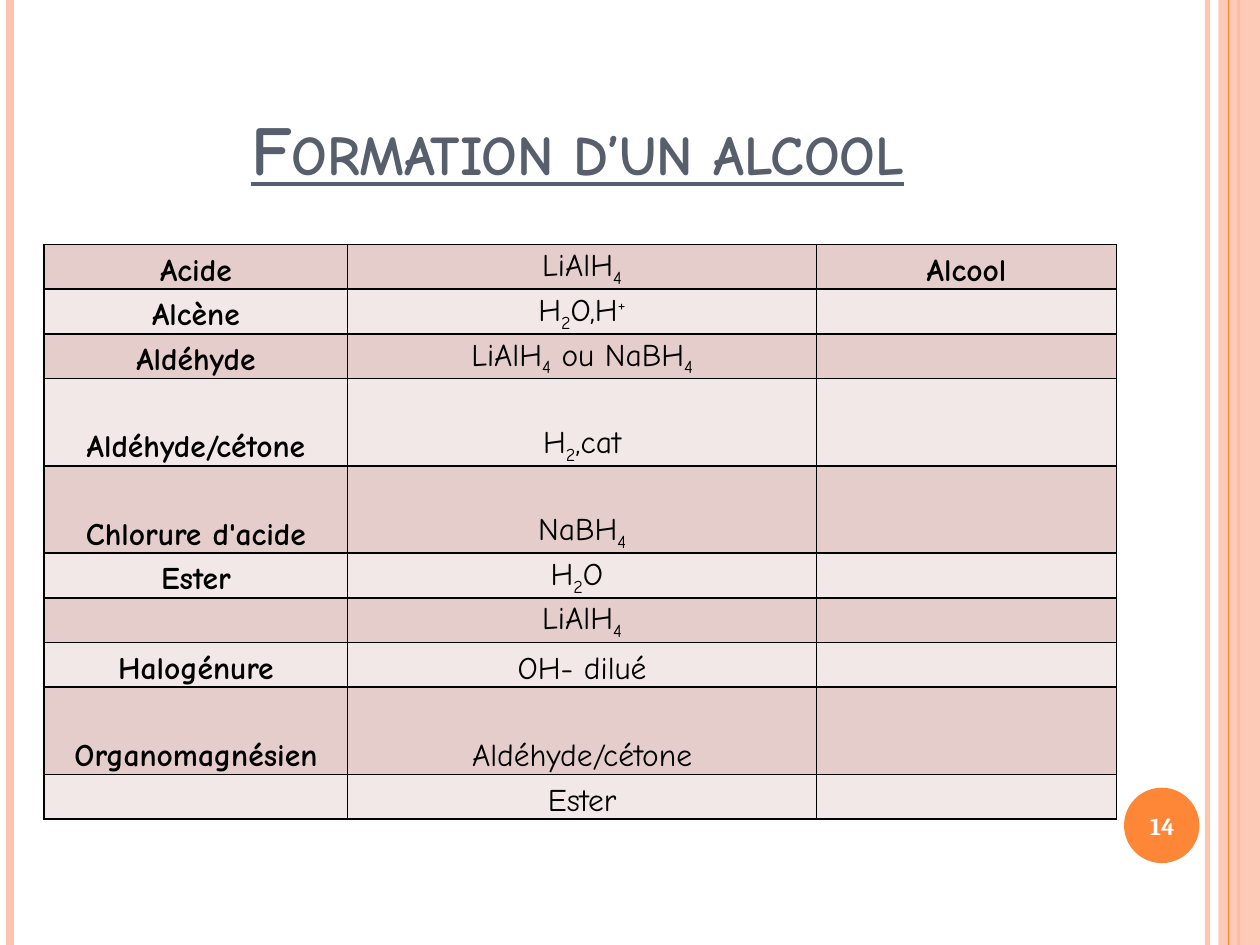
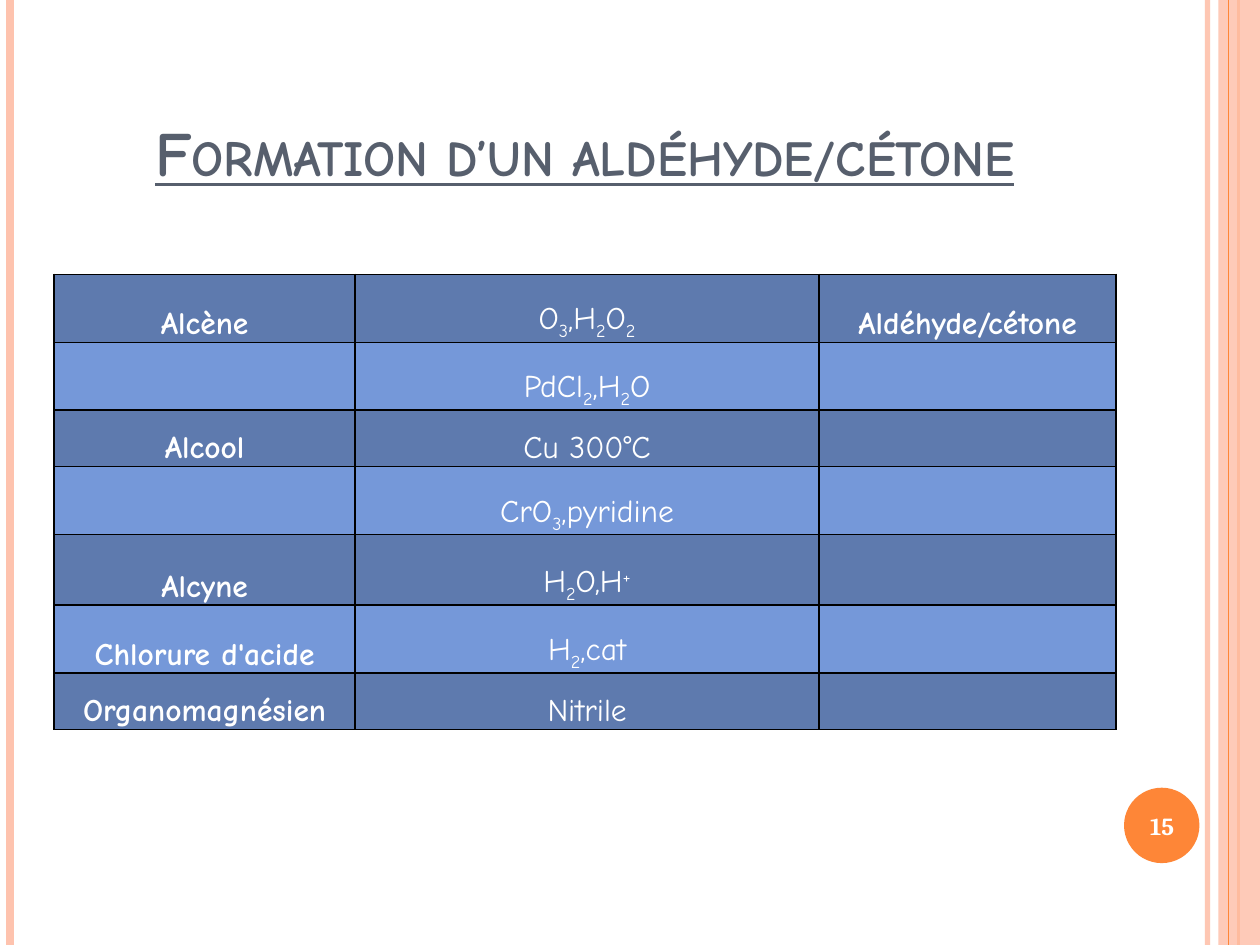
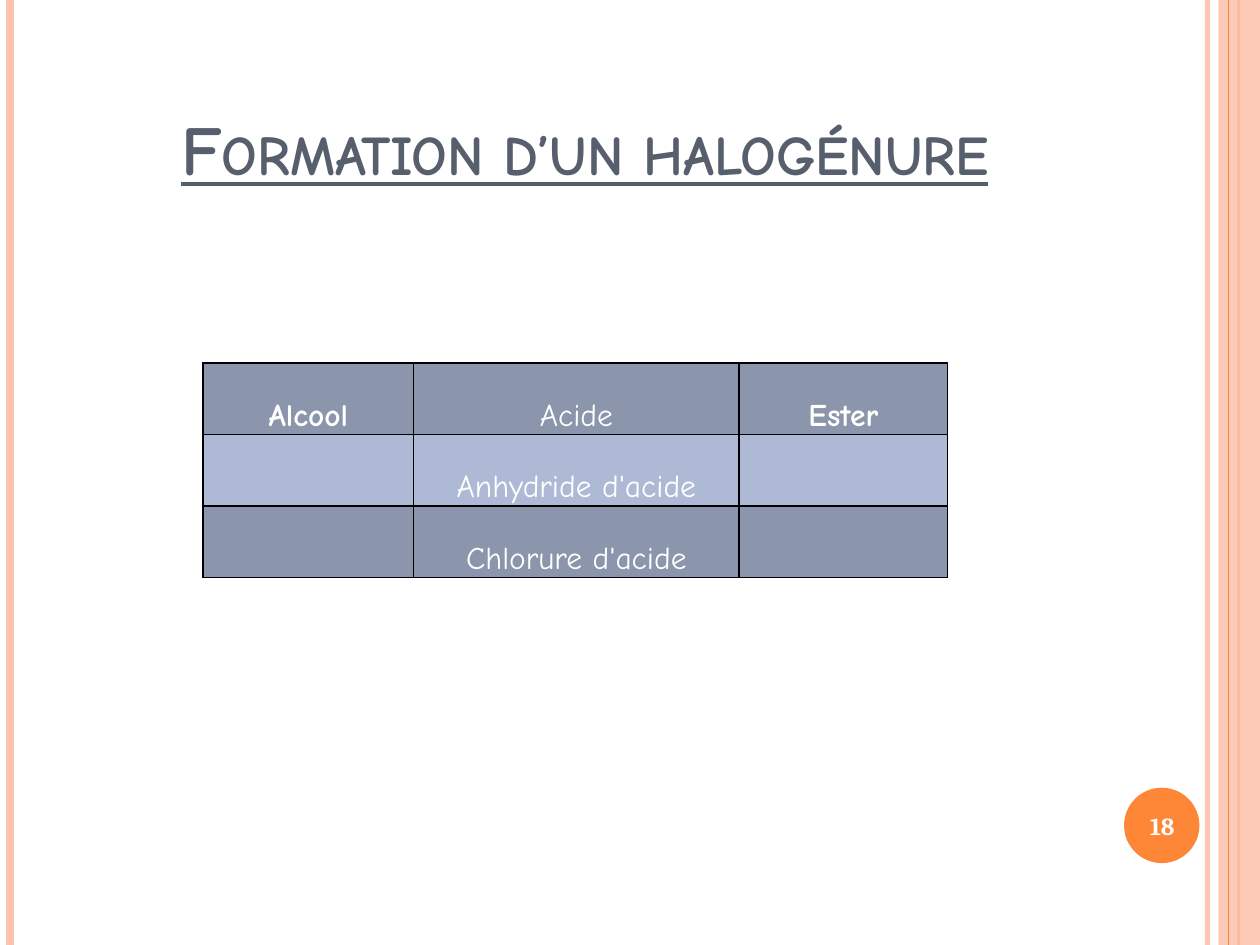
import pptx
import pptx.dml.color
import pptx.enum.shapes
import pptx.enum.text
import pptx.oxml
import pptx.oxml.ns
import pptx.util

Cm = pptx.util.Cm
Pt = pptx.util.Pt
ANCHOR = pptx.enum.text.MSO_ANCHOR
SHAPE = pptx.enum.shapes.MSO_SHAPE

PAGE_WIDTH, PAGE_HEIGHT = 25.4, 19.05

COLOURS = {
    "peach": "FEC3AE", "orange": "FE8637", "slate": "575F6D",
    "black": "000000", "white": "FFFFFF",
    "rose": "E5CDCC", "pale rose": "F2E8E8",
    "steel blue": "5E7AAE", "sky blue": "7598D9",
    "grey blue": "8B95AB", "pale blue": "AEBAD5",
}

TITLE_FORMAT = {"name": "Comic Neue", "bold": True, "underline": True}
NUMBER_FORMAT = {"name": "Cambria", "size": Pt(14), "bold": True}
CELL_FORMAT = {"name": "Comic Neue", "size": Pt(18)}
CELL_LAYOUT = {
    "margin_left": Cm(0.03), "margin_right": Cm(0.03), "margin_top": Cm(0.03),
    "margin_bottom": 0, "vertical_anchor": ANCHOR.BOTTOM,
}

# Vertical rules: x in cm, colour, width in points, opacity in percent
RULES_BEHIND_BAND = [
    (24.34, "peach", 3, 93), (0.2, "peach", 4.5, 100), (24.97, "orange", 1.5, 100),
]
RULE_ON_BAND = (24.77, "orange", 0.75, 100)

# In formulas, _ lowers and ^ raises the next character
BASELINES = {"_": -25000, "^": 30000}

# Each row: substrate, reagent, height in cm
ALCOHOL_ROWS = [
    ("Acide", "LiAlH_4", 0.9),
    ("Alcène", "H_2O,H^+", 0.9),
    ("Aldéhyde", "LiAlH_4 ou NaBH_4", 0.9),
    ("Aldéhyde/cétone", "H_2,cat", 1.76),
    ("Chlorure d'acide", "NaBH_4", 1.76),
    ("Ester", "H_2O ", 0.9),
    ("", "LiAlH_4", 0.9),
    ("Halogénure", "OH- dilué", 0.9),
    ("Organomagnésien", "Aldéhyde/cétone", 1.76),
    ("", "Ester", 0.9),
]
CARBONYL_ROWS = [
    ("Alcène", "O_3,H_2O_2", 1.37),
    ("", "PdCl_2,H_2O", 1.37),
    ("Alcool", "Cu 300°C", 1.14),
    ("", "CrO_3,pyridine", 1.37),
    ("Alcyne", "H_2O,H^+", 1.42),
    ("Chlorure d'acide", "H_2,cat", 1.37),
    ("Organomagnésien", "Nitrile", 1.14),
]
ESTER_ROWS = [
    ("Alcool", "Acide", 1.44),
    ("", "Anhydride d'acide", 1.44),
    ("", "Chlorure d'acide", 1.44),
]


def colour(name):
    return pptx.dml.color.RGBColor.from_string(COLOURS[name])


def apply(target, values):
    for name, value in values.items():
        setattr(target, name, value)


def set_opacity(element, percent):
    for node in element.iter(pptx.oxml.ns.qn("a:srgbClr")):
        pptx.oxml.ns.qn("a:alpha")
        node.append(pptx.oxml.parse_xml(
            f'<a:alpha {pptx.oxml.ns.nsdecls("a")} val="{percent * 1000}"/>'))


def add_span(para, text, ink, values):
    span = para.add_run()
    span.text = text
    apply(span.font, values)
    span.font.color.rgb = colour(ink)
    return span


def add_formula(para, formula, ink, values):
    marked = formula.replace("_", "|_").replace("^", "|^")
    for piece in marked.split("|"):
        if piece[:1] in BASELINES:
            span = add_span(para, piece[1], ink, values)
            span.font._element.set("baseline", str(BASELINES[piece[0]]))
            piece = piece[2:]
        if piece:
            add_span(para, piece, ink, values)


def add_text(page, area, text, ink, values, anchor):
    box = page.shapes.add_textbox(*map(Cm, area))
    apply(box.text_frame, {"word_wrap": True, "vertical_anchor": anchor})
    para = box.text_frame.paragraphs[0]
    para.alignment = pptx.enum.text.PP_ALIGN.CENTER
    return add_span(para, text, ink, values)


def add_rule(page, x, ink, width, opacity):
    rule = page.shapes.add_connector(
        pptx.enum.shapes.MSO_CONNECTOR.STRAIGHT, Cm(x), 0, Cm(x), Cm(PAGE_HEIGHT))
    rule.line.width = Pt(width)
    rule.line.color.rgb = colour(ink)
    if opacity < 100:
        set_opacity(rule.line._ln, opacity)
    rule._element.spPr.append(pptx.oxml.parse_xml(
        f'<a:effectLst {pptx.oxml.ns.nsdecls("a")}/>'))


def add_filled_shape(page, kind, area, ink, opacity=100):
    shape = page.shapes.add_shape(kind, *map(Cm, area))
    shape.shadow.inherit = False
    shape.fill.solid()
    shape.fill.fore_color.rgb = colour(ink)
    shape.line.fill.background()
    if opacity < 100:
        set_opacity(shape._element.spPr, opacity)


def add_page(deck, title, title_area, title_size, number):
    page = deck.slides.add_slide(deck.slide_layouts[6])
    # Side bands and number disc
    for rule in RULES_BEHIND_BAND:
        add_rule(page, *rule)
    add_filled_shape(page, SHAPE.RECTANGLE, (24.56, 0, 0.84, PAGE_HEIGHT), "peach", 87)
    add_rule(page, *RULE_ON_BAND)
    add_filled_shape(page, SHAPE.OVAL, (22.66, 15.88, 1.52, 1.52), "orange")
    # Title and page number
    span = add_text(page, title_area, title, "slate",
                    {**TITLE_FORMAT, "size": Pt(title_size)}, ANCHOR.BOTTOM)
    span.font._element.set("cap", "small")
    add_text(page, (22.58, 15.93, 1.7, 1.45), str(number), "white",
             NUMBER_FORMAT, ANCHOR.MIDDLE)
    return page


def add_borders(cell):
    properties = cell._tc.get_or_add_tcPr()
    for side in "LRTB":
        properties.append(pptx.oxml.parse_xml(
            f'<a:ln{side} {pptx.oxml.ns.nsdecls("a")} w="{Pt(1)}"><a:solidFill>'
            f'<a:srgbClr val="{COLOURS["black"]}"/></a:solidFill></a:ln{side}>'))


def fill_cell(cell, text, ink, background, bold):
    add_borders(cell)
    apply(cell, CELL_LAYOUT)
    cell.fill.solid()
    cell.fill.fore_color.rgb = colour(background)
    para = cell.text_frame.paragraphs[0]
    para.alignment = pptx.enum.text.PP_ALIGN.CENTER
    add_formula(para, text, ink, {**CELL_FORMAT, "bold": bold})


def add_reaction_table(page, left, top, widths, rows, product, ink, backgrounds):
    """Substrate, reagent and product; the product stands in the first row only."""
    height = sum(row[2] for row in rows)
    table = page.shapes.add_table(
        len(rows), len(widths), Cm(left), Cm(top), Cm(sum(widths)), Cm(height)).table
    apply(table, {"first_row": False, "horz_banding": False})
    for column, width in zip(table.columns, widths):
        column.width = Cm(width)
    for index, (substrate, reagent, row_height) in enumerate(rows):
        table.rows[index].height = Cm(row_height)
        texts = (substrate, reagent, "" if index else product)
        for position, text in enumerate(texts):
            fill_cell(table.cell(index, position), text, ink,
                      backgrounds[index % 2], bold=position != 1)


def main():
    deck = pptx.Presentation()
    deck.slide_width, deck.slide_height = Cm(PAGE_WIDTH), Cm(PAGE_HEIGHT)
    wide_title = (0.89, 0.76, 21.8, 3.18)

    # Alcohols
    page = add_page(deck, "Formation d’un alcool", (1.27, 0.76, 20.75, 3.18), 40, 14)
    add_reaction_table(page, 0.89, 4.93, (6.12, 9.45, 6.05), ALCOHOL_ROWS,
                       "Alcool", "black", ("rose", "pale rose"))

    # Aldehydes and ketones
    page = add_page(deck, "Formation d’un aldéhyde/cétone", wide_title, 36, 15)
    add_reaction_table(page, 1.09, 5.53, (6.07, 9.35, 5.99), CARBONYL_ROWS,
                       "Aldéhyde/cétone", "white", ("steel blue", "sky blue"))

    # Halides
    page = add_page(deck, "Formation d’un halogénure", wide_title, 40, 18)
    add_reaction_table(page, 4.09, 7.32, (4.25, 6.56, 4.2), ESTER_ROWS,
                       "Ester", "white", ("grey blue", "pale blue"))

    deck.save("out.pptx")


if __name__ == "__main__":
    main()
